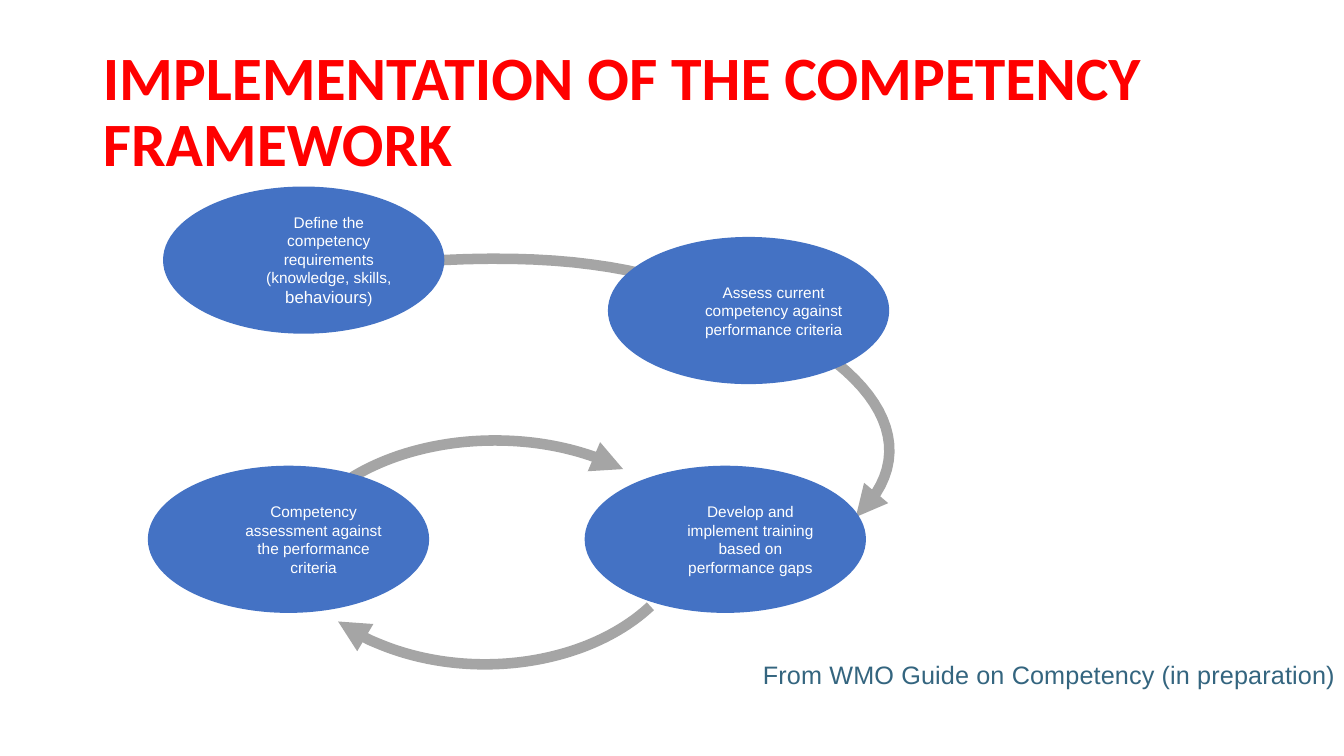
from pptx import Presentation
from pptx.dml.color import RGBColor
from pptx.enum.shapes import MSO_SHAPE as Shape
from pptx.enum.text import MSO_ANCHOR as Anchor, MSO_AUTO_SIZE as AutoSize, PP_ALIGN as Align
from pptx.oxml.ns import qn
from pptx.util import Inches, Pt
from lxml.etree import SubElement

WIDTH, HEIGHT = Inches(13.33), Inches(7.5)
COL, ROW = WIDTH / 100, HEIGHT / 100  # grid of 100 columns by 100 rows

RED, BLUE, GREY, WHITE, TEAL = "FF0000", "4472C4", "A5A5A5", "FFFFFF", "34657F"
STEP_SIZE = (20.93, 19.47)
LARGER_WORD = "behaviours"

# Step: column and row within the cycle, wording
STEPS = [
    (1.13, 0, "Define the competency requirements (knowledge, skills, behaviours)"),
    (34.23, 6.67, "Assess current competency against performance criteria"),
    (32.5, 36.93, "Develop and implement training based on performance gaps"),
    (0, 36.93, "Competency assessment against the performance criteria"),
]
# Arc: column, row, columns, rows, rotation, start and end adjustments
ARCS = [
    (9.7, 24.93, 30.75, 38.27, 180, 124.575, 195.158),
    (10.45, 33.6, 30.75, 35.07, 0, 128.342, 192.562),
]
# Control points of the two Bezier pieces from the first step to the third
SWEEP = [(13.53, 11.07), (31.98, 7.07), (39.4, 11.47), (47.13, 18.67),
         (54.93, 25.87), (57.63, 35.47), (52.68, 43.73)]


def color(value):
    return RGBColor.from_string(value)


def place(box, col, row, cols, rows):
    """Turn a cell range inside a box into left, top, width, height."""
    return [round(n) for n in ((box[0] + col) * COL, (box[1] + row) * ROW,
                               cols * COL, rows * ROW)]


def style_text(paragraph, size, value, font="Arial", bold=False):
    paragraph.font.size = Pt(size)
    paragraph.font.name = font
    paragraph.font.bold = bold
    paragraph.font.color.rgb = color(value)


def indent(paragraph):
    properties = paragraph._p.get_or_add_pPr()
    properties.set("marL", str(Inches(0.5)))
    properties.set("indent", "0")


def style_arrow(arrow, weight):
    arrow.shadow.inherit = False
    arrow.fill.background()
    arrow.line.color.rgb = color(GREY)
    arrow.line.width = Pt(weight)
    SubElement(arrow.element.spPr.find(qn("a:ln")), qn("a:tailEnd"), type="triangle")


def bezier(points, steps=24):
    """Points along a cubic curve, without its first one."""
    for step in range(1, steps + 1):
        t = step / steps
        weights = ((1 - t) ** 3, 3 * t * (1 - t) ** 2, 3 * t * t * (1 - t), t ** 3)
        yield tuple(sum(w * p[axis] for w, p in zip(weights, points)) for axis in (0, 1))


def add_title(slide, box):
    title = slide.shapes.title
    title.left, title.top, title.width, title.height = place(box, 0, 0, *box[2:])
    frame = title.text_frame
    frame.text = "IMPLEMENTATION OF THE COMPETENCY FRAMEWORK"
    frame.word_wrap = True
    frame.auto_size = AutoSize.NONE
    frame.vertical_anchor = Anchor.MIDDLE
    heading = frame.paragraphs[0]
    heading.alignment = Align.LEFT
    heading.line_spacing = 0.9
    style_text(heading, 44, RED, "Calibri", True)


def add_step(shapes, box, col, row, wording):
    step = shapes.add_shape(Shape.OVAL, *place(box, col, row, *STEP_SIZE))
    step.shadow.inherit = False
    step.fill.solid()
    step.fill.fore_color.rgb = color(BLUE)
    step.line.fill.background()
    frame = step.text_frame
    frame.word_wrap = True
    frame.vertical_anchor = Anchor.MIDDLE
    frame.margin_left = frame.margin_right = frame.margin_top = frame.margin_bottom = 0
    label = frame.paragraphs[0]
    label.alignment = Align.CENTER
    indent(label)
    style_text(label, 11, WHITE)
    for part in filter(None, wording.partition(LARGER_WORD)):
        run = label.add_run()
        run.text = part
        if part == LARGER_WORD:
            run.font.size = Pt(12)


def add_cycle(slide, box):
    shapes = slide.shapes.add_group_shape().shapes

    # Long arrow that passes behind the second step
    curve = [SWEEP[0], *bezier(SWEEP[:4]), *bezier(SWEEP[3:])]
    route = [place(box, col, row, 0, 0)[:2] for col, row in curve]
    builder = shapes.build_freeform(*route[0], scale=1.0)
    builder.add_line_segments(route[1:], close=False)
    style_arrow(builder.convert_to_shape(), 7.5)

    # Arrows between the two lower steps
    for *cells, rotation, start, end in ARCS:
        arc = shapes.add_shape(Shape.ARC, *place(box, *cells))
        arc.rotation = rotation
        arc.adjustments[0], arc.adjustments[1] = start, end
        style_arrow(arc, 7.55)

    for step in STEPS:
        add_step(shapes, box, *step)


def add_credit(slide, box):
    frame = slide.shapes.add_textbox(*place(box, 0, 0, *box[2:])).text_frame
    frame.word_wrap = False
    frame.auto_size = AutoSize.SHAPE_TO_FIT_TEXT
    credit = frame.paragraphs[0]
    indent(credit)
    credit.line_spacing = Pt(29)
    credit.space_after = Pt(16)
    style_text(credit, 18, TEAL)
    run = credit.add_run()
    run.text = "From WMO Guide on Competency (in preparation)"
    run._r.get_or_add_rPr().set("spc", "10")


def main():
    deck = Presentation()
    deck.slide_width, deck.slide_height = WIDTH, HEIGHT
    slide = deck.slides.add_slide(deck.slide_layouts[5])
    # Boxes: column, row, columns, rows
    add_title(slide, (6.9, 5.33, 86.25, 19.33))
    add_cycle(slide, (11, 24.67))
    add_credit(slide, (52.28, 85.2, 48, 6.8))
    deck.save("out.pptx")


if __name__ == "__main__":
    main()
